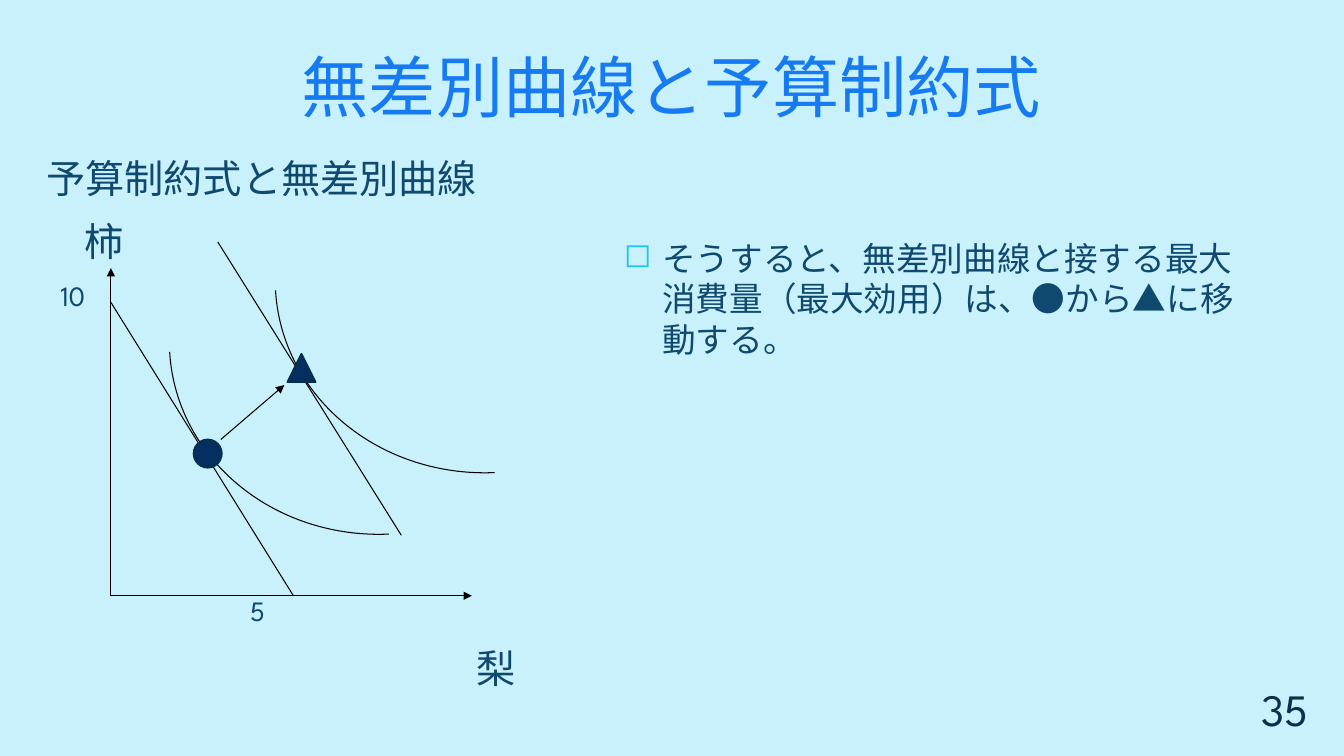
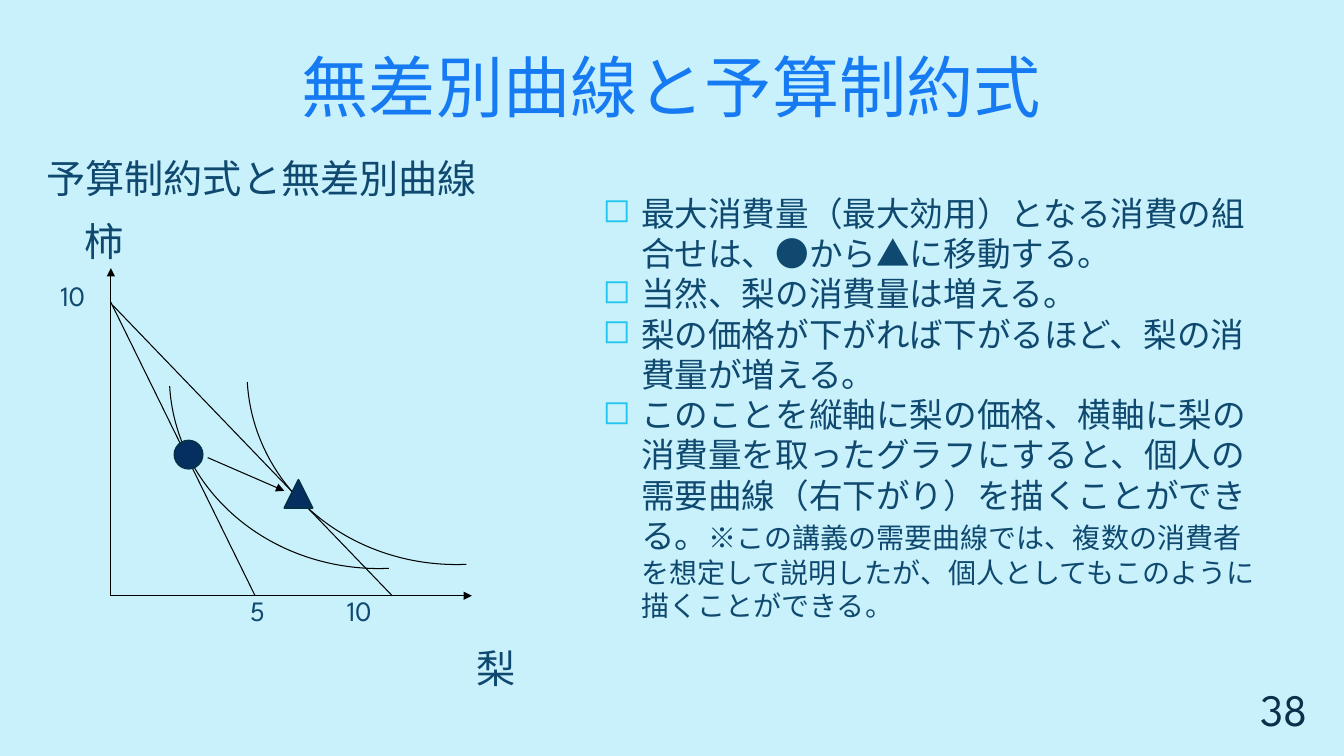
from pptx import Presentation
from pptx.dml.color import RGBColor
from pptx.enum.shapes import MSO_CONNECTOR, MSO_SHAPE
from pptx.enum.text import MSO_ANCHOR, MSO_AUTO_SIZE, PP_ALIGN
from pptx.oxml.ns import qn
from pptx.util import Inches, Pt
from lxml.etree import SubElement

FONT = "League Spartan"
COLORS = {
    "background": "C8F1FB", "title": "167BF3", "text": "0F496F", "number": "0A304A",
    "bullet": "22C5ED", "line": "000000", "marker": "052F61", "marker_edge": "043148",
}
TITLE = "無差別曲線と予算制約式"
SHARED_LABELS = [
    ("予算制約式と無差別曲線", 0.46, 1.76, 28),
    ("柿", 0.84, 2.39, 28),
    ("10", 0.6, 2.93, 20),
    ("5", 2.48, 6.05, 20),
    ("梨", 4.73, 6.63, 28),
]
ORIGIN = (1.1, 5.91)
AXIS_ENDS = [(1.1, 2.66), (4.68, 5.91)]
ARC_SIZE = (4.19, 3.85)
ARC_ANGLES = (162.35, 215.91)
MARKER_SIZE = 0.28

SLIDES = [
    {
        "number": "35",
        "labels": [],
        "body_box": (6.09, 2.31, 6.55, 1.31),
        "body": [[("そうすると、無差別曲線と接する最大消費量（最大効用）は、●から▲に移動する。", 24)]],
        "budgets": [((1.1, 3), (2.91, 5.91)), ((2.16, 2.4), (3.98, 5.31))],
        "curves": [(1.68, 1.45), (2.73, 0.84)],
        "circle": (1.92, 4.36),
        "triangle": (2.85, 3.51),
        "move": ((2.19, 4.36), (2.82, 3.82)),
    },
    {
        "number": "38",
        "labels": [("10", 3.44, 6.05, 20)],
        "body_box": (5.88, 1.86, 6.75, 4.41),
        "body": [
            [("最大消費量（最大効用）となる消費の組合せは、●から▲に移動する。", 24)],
            [("当然、梨の消費量は増える。", 24)],
            [("梨の価格が下がれば下がるほど、梨の消費量が増える。", 24)],
            [("このことを縦軸に梨の価格、横軸に梨の消費量を取ったグラフにすると、"
              "個人の需要曲線（右下がり）を描くことができる。", 24),
             ("※この講義の需要曲線では、複数の消費者を想定して説明したが、"
              "個人としてもこのように描くことができる。", 20)],
        ],
        "budgets": [((1.1, 3), (2.53, 5.91)), ((1.12, 3.03), (3.89, 5.91))],
        "curves": [(1.68, 1.79), (2.45, 1.75)],
        "circle": (1.73, 4.37),
        "triangle": (2.82, 4.76),
        "move": ((2.06, 4.54), (2.82, 4.87)),
    },
]


def color(name):
    return RGBColor.from_string(COLORS[name])


def add_run(paragraph, text, size, color_name):
    run = paragraph.add_run()
    run.text = text
    for name, value in {"name": FONT, "size": Pt(size)}.items():
        setattr(run.font, name, value)
    run.font.color.rgb = color(color_name)
    SubElement(run.font._element, qn("a:ea"), typeface=FONT)


def format_frame(frame, **formats):
    defaults = {"word_wrap": True, "auto_size": MSO_AUTO_SIZE.NONE}
    for name, value in {**defaults, **formats}.items():
        setattr(frame, name, value)


def add_text_box(slide, box, **formats):
    frame = slide.shapes.add_textbox(*map(Inches, box)).text_frame
    format_frame(frame, **formats)
    return frame


def add_title(slide):
    title = slide.shapes.title
    box = {"left": 0.36, "top": 0.36, "width": 12.6, "height": 0.94}
    for name, value in box.items():
        setattr(title, name, Inches(value))
    format_frame(title.text_frame, vertical_anchor=MSO_ANCHOR.BOTTOM)
    paragraph = title.text_frame.paragraphs[0]
    paragraph.alignment = PP_ALIGN.CENTER
    add_run(paragraph, TITLE, 48, "title")


def add_label(slide, text, left, middle, size):
    height = 0.5
    frame = add_text_box(slide, (left, middle - height / 2, 6, height),
                         vertical_anchor=MSO_ANCHOR.MIDDLE, word_wrap=False,
                         margin_left=0, margin_right=0, margin_top=0, margin_bottom=0)
    add_run(frame.paragraphs[0], text, size, "text")


def add_number(slide, number):
    frame = add_text_box(slide, (12.32, 6.74, 0.75, 0.61), vertical_anchor=MSO_ANCHOR.BOTTOM)
    paragraph = frame.paragraphs[0]
    paragraph.alignment = PP_ALIGN.RIGHT
    add_run(paragraph, number, 32, "number")


def add_body(slide, box, items):
    frame = add_text_box(slide, box)
    for index, runs in enumerate(items):
        paragraph = frame.add_paragraph() if index else frame.paragraphs[0]
        properties = paragraph._p.get_or_add_pPr()
        indent = Inches(0.38)
        properties.set("marL", str(indent))
        properties.set("indent", str(-indent))
        bullet_color = SubElement(properties, qn("a:buClr"))
        SubElement(bullet_color, qn("a:srgbClr"), val=COLORS["bullet"])
        SubElement(properties, qn("a:buChar"), char="◻")
        for text, size in runs:
            add_run(paragraph, text, size, "text")


def add_line(slide, start, end, arrow=False):
    line = slide.shapes.add_connector(MSO_CONNECTOR.STRAIGHT, *map(Inches, (*start, *end)))
    line.line.color.rgb = color("line")
    line.line.width = Pt(0.75)
    if arrow:
        SubElement(line.line._get_or_add_ln(), qn("a:tailEnd"), type="triangle")
    SubElement(line._element.spPr, qn("a:effectLst"))


def add_figure(slide, kind, position, size, line_color, line_width):
    shape = slide.shapes.add_shape(kind, *map(Inches, (*position, *size)))
    shape.shadow.inherit = False
    shape.line.color.rgb = color(line_color)
    shape.line.width = Pt(line_width)
    return shape


def add_curve(slide, position):
    curve = add_figure(slide, MSO_SHAPE.ARC, position, ARC_SIZE, "line", 0.75)
    curve.fill.background()
    curve.rotation = 177
    for index, angle in enumerate(ARC_ANGLES):
        curve.adjustments[index] = angle


def add_marker(slide, kind, position):
    marker = add_figure(slide, kind, position, (MARKER_SIZE, MARKER_SIZE), "marker_edge", 1.25)
    marker.fill.solid()
    marker.fill.fore_color.rgb = color("marker")


def add_graph(slide, content):
    for end in AXIS_ENDS:
        add_line(slide, ORIGIN, end, arrow=True)
    for start, end in content["budgets"]:
        add_line(slide, start, end)
    for position in content["curves"]:
        add_curve(slide, position)
    add_marker(slide, MSO_SHAPE.OVAL, content["circle"])
    add_marker(slide, MSO_SHAPE.ISOSCELES_TRIANGLE, content["triangle"])
    add_line(slide, *content["move"], arrow=True)


def main():
    presentation = Presentation()
    presentation.slide_width = Inches(13.33)
    presentation.slide_height = Inches(7.5)
    background = presentation.slide_master.background.fill
    background.solid()
    background.fore_color.rgb = color("background")
    for content in SLIDES:
        slide = presentation.slides.add_slide(presentation.slide_layouts[5])
        add_title(slide)
        for label in SHARED_LABELS + content["labels"]:
            add_label(slide, *label)
        add_number(slide, content["number"])
        add_body(slide, content["body_box"], content["body"])
        add_graph(slide, content)
    presentation.save("out.pptx")


if __name__ == "__main__":
    main()
